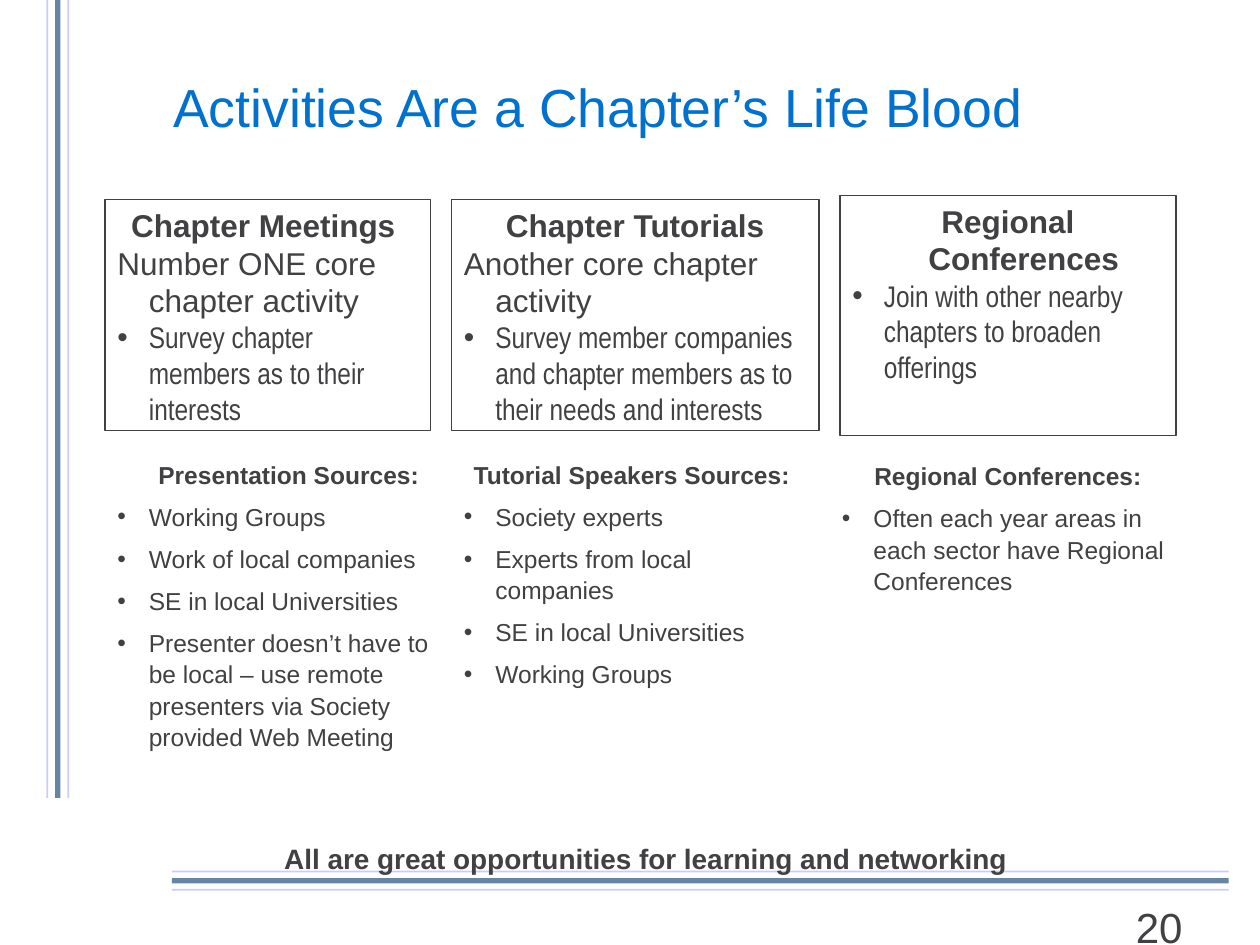
from dataclasses import dataclass

from lxml import etree
from pptx import Presentation
from pptx import util as u
from pptx.dml.color import RGBColor
from pptx.enum import shapes, text
from pptx.oxml.ns import qn

PX = 9525  # EMU in one px, at 96 px to the inch


@dataclass(frozen=True)
class Theme:
    ink: str = "414042"
    title_blue: str = "0071CE"
    thin_rule: tuple = ("9999FF", 1, 50)  # colour, points, opacity in percent
    thick_rule: tuple = ("003366", 3, 60)
    font: str = "Arial"
    narrow: str = "Arial Narrow"
    title: float = 30.6
    number: int = 24
    heading: int = 18
    point: int = 17
    footer: int = 16
    source: int = 14
    indent: int = 24


THEME = Theme()

# card box, heading, lead line, point; list box, heading, items
COLUMNS = [
    ((80, 152, 248, 176), "Chapter Meetings ", "Number ONE core chapter activity",
     "Survey chapter members as to their interests",
     (80, 344, 280, 236), "Presentation Sources:",
     ["Working Groups", "Work of local companies", "SE in local Universities",
      "Presenter doesn’t have to be local – use remote presenters via "
      "Society provided Web Meeting"]),
    ((344, 152, 280, 176), "Chapter Tutorials", "Another core chapter activity",
     "Survey member companies and chapter members as to their needs and interests",
     (344, 344, 280, 252), "Tutorial Speakers Sources: ",
     ["Society experts", "Experts from local companies",
      "SE in local Universities", "Working Groups"]),
    ((640, 149, 256, 183), "Regional Conferences", None,
     "Join with other nearby chapters to broaden offerings",
     (632, 345, 272, 147), "Regional Conferences:",
     ["Often each year areas in each sector have Regional Conferences"]),
]


def px(*lengths):
    return [u.Emu(length * PX) for length in lengths]


def add_rule(slide, start, end, style):
    colour, width, opacity = style
    line = slide.shapes.add_connector(
        shapes.MSO_CONNECTOR.STRAIGHT, *px(*start, *end))
    line.line.width = u.Pt(width)
    line.line.color.rgb = RGBColor.from_string(colour)
    fill = line.line.color._xFill if hasattr(line.line.color, "_xFill") else None
    properties = line._element.spPr
    fill = properties.find(".//" + qn("a:srgbClr"))
    etree.SubElement(fill, qn("a:alpha")).set("val", str(opacity * 1000))
    etree.SubElement(properties, qn("a:effectLst"))


def add_text_box(slide, box):
    frame = slide.shapes.add_textbox(*px(*box)).text_frame
    frame.word_wrap = True
    return frame


def write(frame, content, size, colour=THEME.ink, font=THEME.font, bold=False,
          centred=False, hanging=False, bullet=False, spaced=False):
    """Fill the frame's first empty paragraph, or add one after the others."""
    paragraph = frame.paragraphs[0]
    if paragraph.runs:
        paragraph = frame.add_paragraph()
    paragraph.alignment = text.PP_ALIGN.CENTER if centred else text.PP_ALIGN.LEFT
    if spaced:
        paragraph.line_spacing = u.Pt(18)
        paragraph.space_after = u.Pt(6)
    properties = paragraph._p.get_or_add_pPr()
    if hanging:
        properties.set("marL", str(THEME.indent * PX))
        properties.set("indent", str(-THEME.indent * PX))
    if bullet:
        etree.SubElement(properties, qn("a:buFont")).set("typeface", THEME.font)
        etree.SubElement(properties, qn("a:buChar")).set("char", "•")
    paragraph.add_run().text = content
    paragraph.font.name = font
    paragraph.font.size = u.Pt(size)
    paragraph.font.bold = bold
    paragraph.font.color.rgb = RGBColor.from_string(colour)


def add_side_rules(slide, left, top, bottom, gap):
    styles = (THEME.thin_rule, THEME.thick_rule, THEME.thin_rule)
    for index, style in enumerate(styles):
        x = left + index * gap
        add_rule(slide, (x, top), (x, bottom), style)


def add_bottom_rules(slide, left, top, right, gap):
    styles = (THEME.thin_rule, THEME.thick_rule, THEME.thin_rule)
    for index, style in enumerate(styles):
        y = top + index * gap
        add_rule(slide, (right, y), (left, y), style)


def add_title(slide, box, content):
    frame = add_text_box(slide, box)
    frame.vertical_anchor = text.MSO_ANCHOR.BOTTOM
    frame.margin_left, frame.margin_right = px(12, 12)
    frame.margin_top, frame.margin_bottom = px(7, 7)
    write(frame, content, THEME.title, THEME.title_blue)


def add_card(slide, box, heading, lead, point):
    card = slide.shapes.add_shape(shapes.MSO_SHAPE.RECTANGLE, *px(*box))
    card.shadow.inherit = False
    card.fill.background()
    card.line.color.rgb = RGBColor.from_string(THEME.ink)
    card.line.width = u.Pt(0.75)
    frame = card.text_frame
    frame.word_wrap = True
    frame.vertical_anchor = text.MSO_ANCHOR.TOP
    write(frame, heading, THEME.heading, bold=True, centred=True, hanging=True)
    if lead:
        write(frame, lead, THEME.heading, hanging=True)
    write(frame, point, THEME.point, font=THEME.narrow, hanging=True, bullet=True)


def add_source_list(slide, box, heading, items):
    frame = add_text_box(slide, box)
    write(frame, heading, THEME.source, bold=True, centred=True,
          hanging=True, spaced=True)
    for item in items:
        write(frame, item, THEME.source, hanging=True, bullet=True, spaced=True)


def main():
    presentation = Presentation()
    presentation.slide_width, presentation.slide_height = px(960, 720)
    slide = presentation.slides.add_slide(presentation.slide_layouts[6])
    add_side_rules(slide, left=36, top=0, bottom=608, gap=8)
    add_bottom_rules(slide, left=131, top=664, right=936, gap=7)
    write(add_text_box(slide, (856, 682, 64, 38)), "20", THEME.number)
    add_title(slide, (120, 48, 840, 64), "Activities Are a Chapter’s Life Blood")
    for card_box, heading, lead, point, list_box, list_heading, items in COLUMNS:
        add_card(slide, card_box, heading, lead, point)
        add_source_list(slide, list_box, list_heading, items)
    write(add_text_box(slide, (96, 638, 792, 34)),
          "All are great opportunities for learning and networking",
          THEME.footer, bold=True, centred=True, spaced=True)
    presentation.save("out.pptx")


if __name__ == "__main__":
    main()
